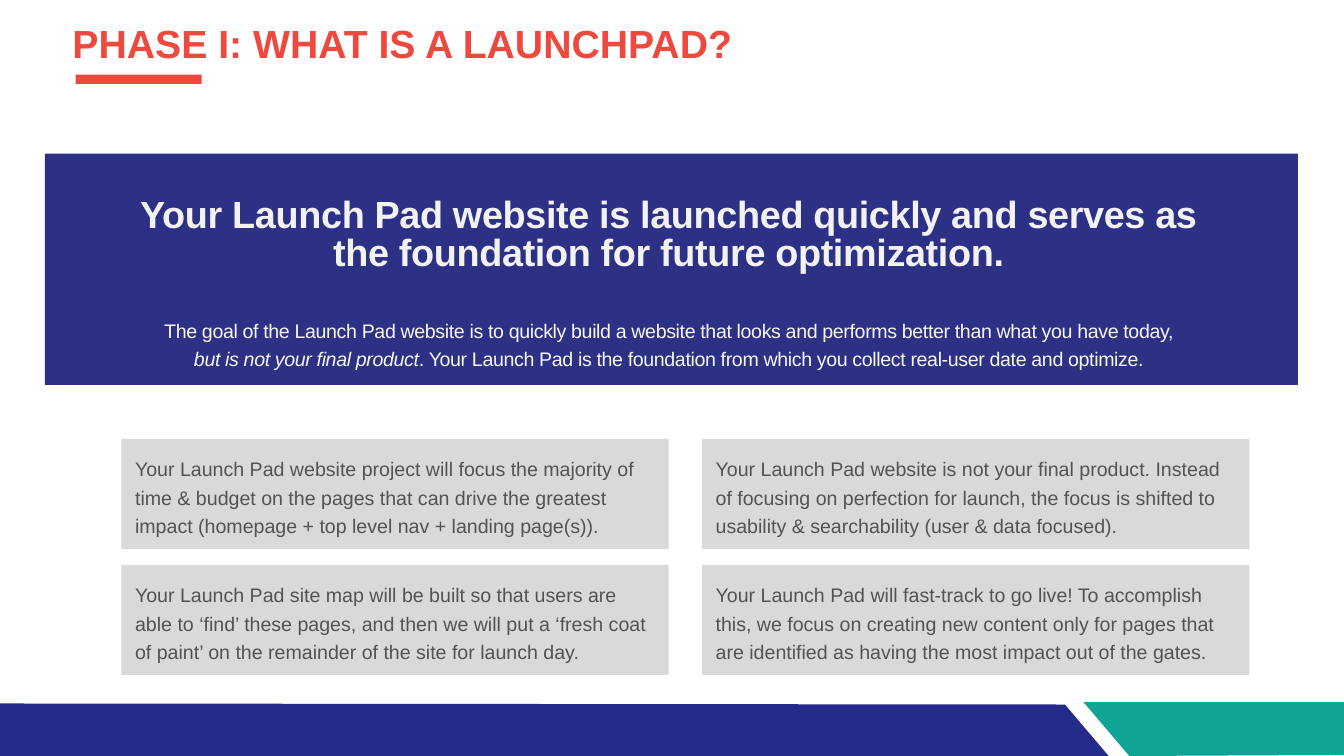
import pptx
import pptx.dml.color
import pptx.enum.shapes
import pptx.enum.text
import pptx.util

Pt = pptx.util.Pt
ALIGN = pptx.enum.text.PP_ALIGN
RED, NAVY, GREY = "ED493F", "2D3185", "D9D9D9"
WIDE, HIGH = 1920.24, 1080

TITLE = dict(size=Pt(56), bold=True)
HEAD = dict(size=Pt(54), bold=True)
BODY = dict(size=Pt(28), bold=False)

CARDS = [
    "Your Launch Pad website project will focus the majority of time & budget on the pages "
    "that can drive the greatest impact (homepage + top level nav + landing page(s)).",
    "Your Launch Pad website is not your final product. Instead of focusing on perfection "
    "for launch, the focus is shifted to usability & searchability (user & data focused).",
    "Your Launch Pad site map will be built so that users are able to ‘find’ these pages, "
    "and then we will put a ‘fresh coat of paint’ on the remainder of the site for launch day.",
    "Your Launch Pad will fast-track to go live! To accomplish this, we focus on creating "
    "new content only for pages that are identified as having the most impact out of the gates.",
]


def rgb(code):
    return pptx.dml.color.RGBColor.from_string(code)


def paint(shape, code):
    shape.shadow.inherit = False
    shape.fill.solid()
    shape.fill.fore_color.rgb = rgb(code)
    shape.line.fill.background()


def add_rect(slide, box, code):
    kind = pptx.enum.shapes.MSO_SHAPE.RECTANGLE
    shape = slide.shapes.add_shape(kind, *map(Pt, box))
    paint(shape, code)
    return shape


def add_poly(slide, points, code):
    first, *rest = [(Pt(x), Pt(y)) for x, y in points]
    pen = slide.shapes.build_freeform(*first, scale=1)
    pen.add_line_segments(rest, close=True)
    paint(pen.convert_to_shape(), code)


def add_frame(slide, box):
    frame = slide.shapes.add_textbox(*map(Pt, box)).text_frame
    frame.word_wrap = True
    return frame


def add_run(para, text, code, form, track=0):
    """Add a run; track is letter spacing in hundredths of a point."""
    run = para.add_run()
    run.text = text
    run.font.name = "Arial"
    run.font.color.rgb = rgb(code)
    for name, value in form.items():
        setattr(run.font, name, value)
    if track:
        run.font._element.set("spc", str(track))


def add_title(slide):
    frame = add_frame(slide, (96.5, 23.75, 1776, 75))
    add_run(frame.paragraphs[0], "PHASE I: WHAT IS A LAUNCHPAD?", RED, TITLE)
    add_rect(slide, (108, 106.5, 180, 13.5), RED)


def add_banner(slide):
    add_rect(slide, (64, 219.5, 1790.5, 330.5), NAVY)
    frame = add_frame(slide, (60, 278.5, 1790.5, 84))
    lines = [
        (0.85, 0, "F2F2F2",
         [("Your Launch Pad website is launched quickly and serves as", HEAD)]),
        (0.85, 0, "F2F2F2", [("the foundation for future optimization.", HEAD)]),
        (1.2, 56, "F7F7F7",
         [("The goal of the Launch Pad website is to quickly build a website that looks "
           "and performs better than what you have today,", BODY)]),
        (1.2, 0, "F7F7F7",
         [("but is not your final product", dict(BODY, italic=True)),
          (". Your Launch Pad is the foundation from which you collect real-user date "
           "and optimize.", BODY)]),
    ]
    for row, (pitch, gap, code, runs) in enumerate(lines):
        para = frame.add_paragraph() if row else frame.paragraphs[0]
        form = dict(alignment=ALIGN.CENTER, line_spacing=pitch, space_before=Pt(gap))
        for name, value in form.items():
            setattr(para, name, value)
        for text, font in runs:
            add_run(para, text, code, font, -50)


def add_card(slide, box, text):
    frame = add_rect(slide, box, GREY).text_frame
    form = dict(word_wrap=True, vertical_anchor=pptx.enum.text.MSO_ANCHOR.TOP)
    for side in ("left", "top", "right", "bottom"):
        form["margin_" + side] = Pt(19.5)
    for name, value in form.items():
        setattr(frame, name, value)
    para = frame.paragraphs[0]
    para.alignment = ALIGN.LEFT
    para.line_spacing = 1.2
    add_run(para, text, "535353", BODY)


def add_footer(slide):
    add_poly(slide, [(0, 1005), (1521.5, 1006.5), (1584, HIGH), (0, HIGH)], "242A88")
    add_poly(slide, [(1548, 1003), (WIDE, 1003), (WIDE, 1078.5), (1613.5, HIGH)], "10A496")


def main():
    deck = pptx.Presentation()
    deck.slide_width, deck.slide_height = Pt(WIDE), Pt(HIGH)
    slide = deck.slides.add_slide(deck.slide_layouts[6])
    add_footer(slide)
    add_title(slide)
    add_banner(slide)
    for spot, text in enumerate(CARDS):
        row, col = divmod(spot, 2)
        add_card(slide, (173.5 + 829.5 * col, 627 + 180 * row, 782, 157), text)
    deck.save("out.pptx")


if __name__ == "__main__":
    main()
